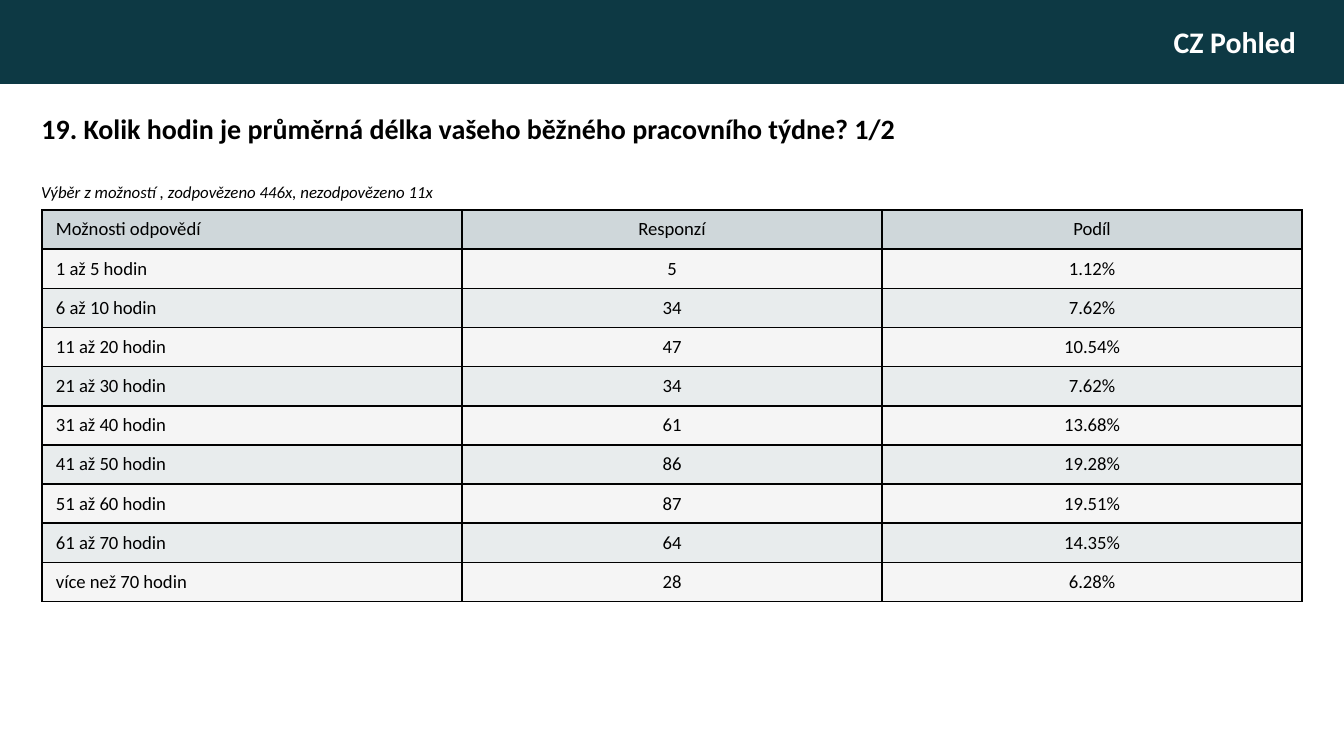
from lxml import etree
from pptx import Presentation
from pptx import util as u
from pptx.dml.color import RGBColor
from pptx.enum import shapes, text
from pptx.oxml.ns import qn

BRAND = "CZ Pohled"
TITLE = "19. Kolik hodin je průměrná délka vašeho běžného pracovního týdne? 1/2"
NOTE = "Výběr z možností , zodpovězeno 446x, nezodpovězeno 11x"
HEADER = ("Možnosti odpovědí", "Responzí", "Podíl")
ANSWERS = [
    ("1 až 5 hodin", "5", "1.12%"),
    ("6 až 10 hodin", "34", "7.62%"),
    ("11 až 20 hodin", "47", "10.54%"),
    ("21 až 30 hodin", "34", "7.62%"),
    ("31 až 40 hodin", "61", "13.68%"),
    ("41 až 50 hodin", "86", "19.28%"),
    ("51 až 60 hodin", "87", "19.51%"),
    ("61 až 70 hodin", "64", "14.35%"),
    ("více než 70 hodin", "28", "6.28%"),
]
FONT = "Calibri"
BLACK, WHITE, TEAL = "000000", "FFFFFF", "0D3944"
HEADER_FILL, ROW_FILLS = "CFD7DA", ("F5F5F5", "E8ECED")
LEFT, CENTER, RIGHT = text.PP_ALIGN.LEFT, text.PP_ALIGN.CENTER, text.PP_ALIGN.RIGHT
TOP, MIDDLE = text.MSO_ANCHOR.TOP, text.MSO_ANCHOR.MIDDLE


def px(n):
    return u.Emu(round(n * 914400 / 134.4))


def rgb(value):
    return RGBColor.from_string(value)


def fill(obj, color):
    obj.fill.solid()
    obj.fill.fore_color.rgb = rgb(color)


def write(tf, words, size, color=BLACK, align=LEFT, bold=False, italic=False):
    p = tf.paragraphs[0]
    p.alignment = align
    r = p.add_run()
    r.text = words
    f = r.font
    f.name, f.size, f.bold, f.italic = FONT, u.Pt(size), bold, italic
    f.color.rgb = rgb(color)
    return p


def add_borders(cell):
    """Draw a 1 pt black line on all four sides; lines must precede the fill."""
    tcPr = cell._tc.get_or_add_tcPr()
    for i, side in enumerate(("lnL", "lnR", "lnT", "lnB")):
        ln = etree.Element(qn(f"a:{side}"), w=str(u.Pt(1)))
        solid = etree.SubElement(ln, qn("a:solidFill"))
        etree.SubElement(solid, qn("a:srgbClr"), val=BLACK)
        tcPr.insert(i, ln)


def add_answer_table(s, left, top, width, height):
    rows = [HEADER] + ANSWERS
    table = s.shapes.add_table(len(rows), len(HEADER), px(left), px(top),
                               px(width), px(height)).table
    for col in table.columns:
        col.width = px(width / len(HEADER))
    for i, row in enumerate(rows):
        table.rows[i].height = px(height / len(rows))
        color = ROW_FILLS[(i - 1) % 2] if i else HEADER_FILL
        for j, words in enumerate(row):
            cell = table.cell(i, j)
            cell.margin_left = px(0 if j else 7)
            cell.margin_right = cell.margin_top = cell.margin_bottom = 0
            cell.vertical_anchor = MIDDLE
            fill(cell, color)
            add_borders(cell)
            p = write(cell.text_frame, words, 10, align=CENTER if j else LEFT)
            if j == 0:
                p._p.get_or_add_pPr().set("marL", str(px(7)))


def main():
    prs = Presentation()
    prs.slide_width, prs.slide_height = px(1344), px(756)
    s = prs.slides.add_slide(prs.slide_layouts[5])

    band = s.shapes.add_shape(shapes.MSO_SHAPE.RECTANGLE, 0, 0, px(1344), px(84))
    band.shadow.inherit = False
    fill(band, TEAL)
    band.line.fill.background()
    band.text_frame.margin_right = px(48)
    band.text_frame.vertical_anchor = MIDDLE
    write(band.text_frame, BRAND, 16, WHITE, RIGHT, bold=True)

    note = s.shapes.add_textbox(px(28), px(175), px(560), px(83))
    note.text_frame.word_wrap = True
    write(note.text_frame, NOTE, 9, italic=True)

    add_answer_table(s, 42, 210, 1260, 392)

    title = s.shapes.title
    title.left, title.top, title.width, title.height = px(28), px(105), px(1288), px(70)
    title.text_frame.auto_size = text.MSO_AUTO_SIZE.NONE
    title.text_frame.vertical_anchor = TOP
    write(title.text_frame, TITLE, 15, bold=True)

    prs.save("out.pptx")


if __name__ == "__main__":
    main()
